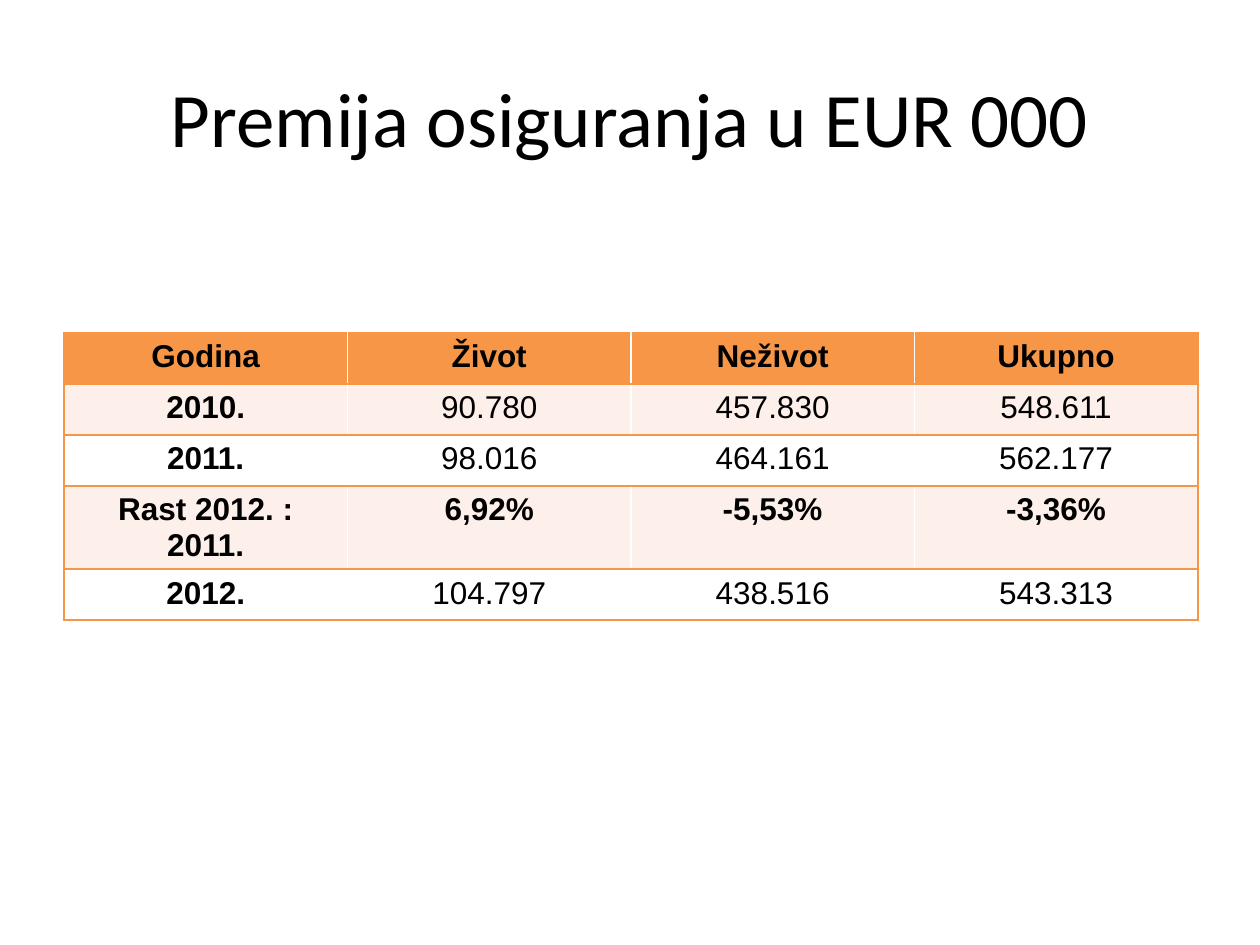
from pptx import Presentation
from pptx.dml.color import RGBColor
from pptx.enum.text import MSO_ANCHOR, PP_ALIGN
from pptx.oxml.ns import qn
from pptx.util import Pt
from lxml import etree

CENTER = PP_ALIGN.CENTER
MIDDLE = MSO_ANCHOR.MIDDLE
PX = 914400 // 126
COLORS = {"text": "000000", "head": "F79646", "band": "FDEFE9", "plain": "FFFFFF"}


def style(para, font, size, bold):
    para.alignment = CENTER
    para.font.name = font
    para.font.size = Pt(size)
    para.font.bold = bold
    para.font.color.rgb = RGBColor.from_string(COLORS["text"])


def border(cell, side):
    props = cell._tc.get_or_add_tcPr()
    line = etree.SubElement(props, qn("a:" + side), w=str(Pt(1)))
    fill = etree.SubElement(line, qn("a:solidFill"))
    etree.SubElement(fill, qn("a:srgbClr"), val=COLORS["head"])


deck = Presentation()
deck.slide_width = 1260 * PX
deck.slide_height = 945 * PX
slide = deck.slides.add_slide(deck.slide_layouts[5])

# Title
title = slide.shapes.title
title.left, title.top, title.width, title.height = [n * PX for n in (63, 38, 1134, 158)]
title.text_frame.text = "Premija osiguranja u EUR 000"
title.text_frame.vertical_anchor = MIDDLE
style(title.text_frame.paragraphs[0], "Calibri", 44, False)

# Premium table
rows = [
    ("Godina", "Život", "Neživot", "Ukupno"),
    ("2010.", "90.780", "457.830", "548.611"),
    ("2011.", "98.016", "464.161", "562.177"),
    ("Rast 2012. : 2011.", "6,92%", "-5,53%", "-3,36%"),
    ("2012.", "104.797", "438.516", "543.313"),
]
fills = ["head", "band", "plain", "band", "plain"]
bold_rows = (0, 3)
last = len(rows[0]) - 1
frame = slide.shapes.add_table(
    len(rows), len(rows[0]), 64 * PX, 333 * PX, 1134 * PX, 51 * len(rows) * PX)
table = frame.table

for r, row in enumerate(rows):
    for c, text in enumerate(row):
        cell = table.cell(r, c)
        cell.text = text
        style(cell.text_frame.paragraphs[0], "Arial", 18, c == 0 or r in bold_rows)

        # Rules between rows, and an outer frame
        if c == 0:
            border(cell, "lnL")
        if c == last:
            border(cell, "lnR")
        border(cell, "lnT")
        border(cell, "lnB")

        cell.fill.solid()
        cell.fill.fore_color.rgb = RGBColor.from_string(COLORS[fills[r]])

deck.save("out.pptx")
